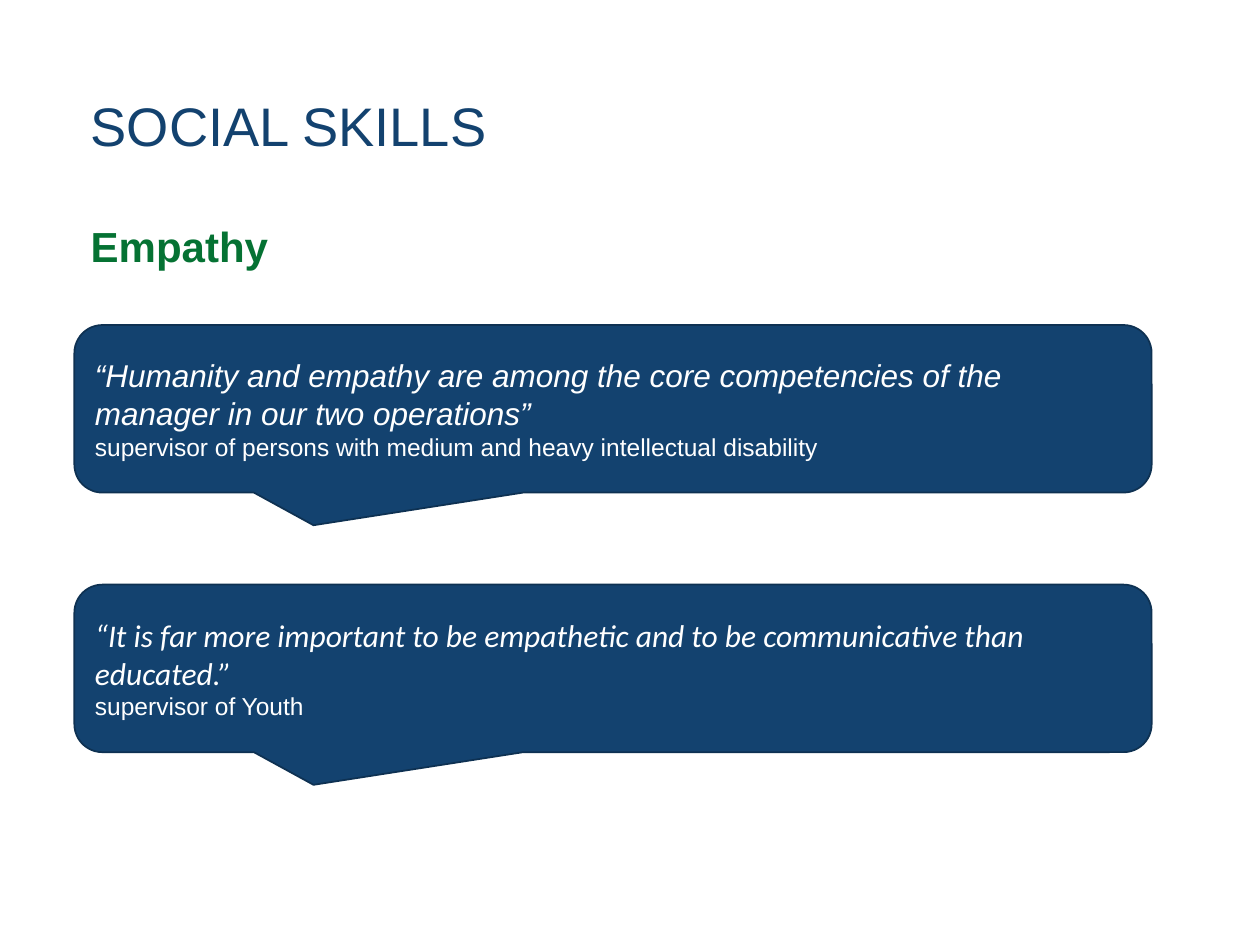
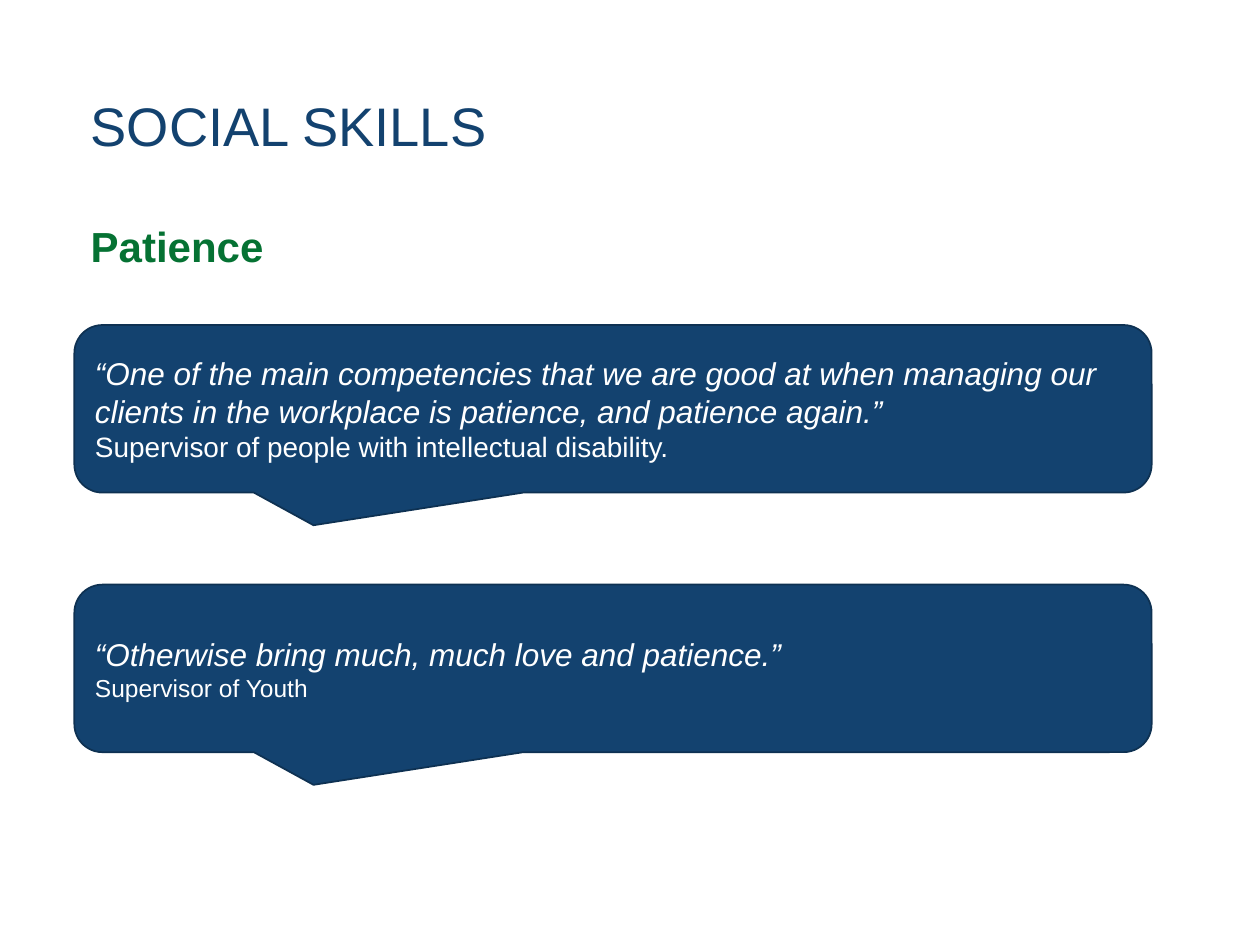
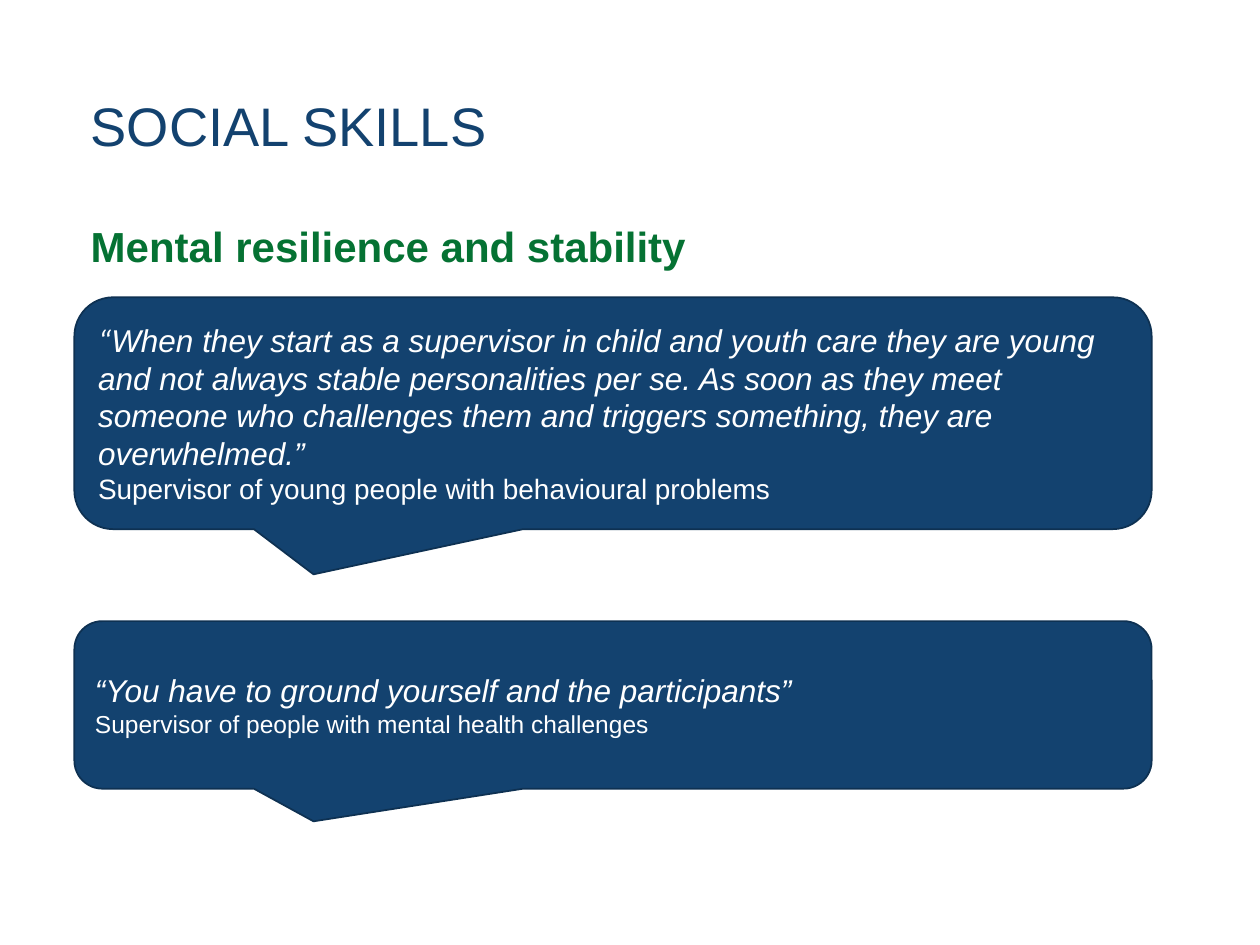
from pptx import Presentation
from pptx.dml.color import RGBColor
from pptx.enum.shapes import MSO_SHAPE as Shape
from pptx.enum.text import MSO_ANCHOR as Anchor, PP_ALIGN as Align
from pptx.util import Inches, Pt

BLUE, EDGE, GREEN, WHITE = "13426F", "0E3152", "057233", "FFFFFF"
SANS, ALT = "Arial", "Calibri"
TITLE = "SOCIAL SKILLS"
LEFT, WIDE = 0.72, 8.55
QUOTE_LEFT = 0.59
TAIL = (-0.278, 0.695, 0.167)

SLIDES = [
    ("Empathy", [
        (2.58, 1.33,
         [("“Humanity and empathy are among the core competencies of the manager in our two operations”", SANS)],
         "supervisor of persons with medium and heavy intellectual disability", 14),
        (4.64, 1.33,
         [("“It is far more important to be empathetic and to be communicative than educated.”", ALT)],
         "supervisor of Youth", 14),
    ]),
    ("Patience", [
        (2.58, 1.33,
         [("“One of the main competencies that we are good at when managing our clients in the workplace is patience, and patience again.”", SANS)],
         "Supervisor of people with intellectual disability.", 16),
        (4.64, 1.33,
         [("“Otherwise bring much, much love and patience.”", SANS)],
         "Supervisor of Youth", 14),
    ]),
    ("Mental resilience and stability", [
        (2.36, 1.84,
         [("“", ALT),
          ("When they start as a supervisor in child and youth care they are young and not always stable personalities per se. "
           "As soon as they meet someone who challenges them and triggers something, they are overwhelmed.”", SANS)],
         "Supervisor of young people with behavioural problems", 16),
        (4.93, 1.33,
         [("“You have to ground yourself and the participants”", SANS)],
         "Supervisor of people with mental health challenges", 14),
    ]),
]


def color(code):
    return RGBColor.from_string(code)


def add_run(para, text, size, code, face=SANS, bold=False, italic=False):
    run = para.add_run()
    run.text = text
    font = run.font
    font.name, font.size = face, Pt(size)
    font.bold, font.italic = bold, italic
    font.color.rgb = color(code)


def add_head(slide, top, high, text, size, code, space, after=0, bold=False):
    box = slide.shapes.add_textbox(Inches(LEFT), Inches(top), Inches(WIDE), Inches(high))
    frame = box.text_frame
    frame.word_wrap = True
    frame.margin_left = 0
    para = frame.paragraphs[0]
    para.line_spacing = space
    para.space_after = Pt(after)
    add_run(para, text, size, code, bold=bold)


def add_quote(slide, top, high, words, source, size):
    bubble = slide.shapes.add_shape(
        Shape.ROUNDED_RECTANGULAR_CALLOUT,
        Inches(QUOTE_LEFT), Inches(top), Inches(WIDE), Inches(high))
    for i, value in enumerate(TAIL):
        bubble.adjustments[i] = value
    bubble.shadow.inherit = False
    bubble.fill.solid()
    bubble.fill.fore_color.rgb = color(BLUE)
    bubble.line.color.rgb = color(EDGE)
    bubble.line.width = Pt(1)
    frame = bubble.text_frame
    frame.word_wrap = True
    frame.vertical_anchor = Anchor.MIDDLE
    quote, credit = frame.paragraphs[0], frame.add_paragraph()
    quote.alignment = credit.alignment = Align.LEFT
    for text, face in words:
        add_run(quote, text, 18, WHITE, face, italic=True)
    add_run(credit, source, size, WHITE)


def main():
    deck = Presentation()
    deck.slide_width, deck.slide_height = Inches(10), Inches(7.5)
    for skill, quotes in SLIDES:
        slide = deck.slides.add_slide(deck.slide_layouts[6])
        add_head(slide, 0.73, 1.12, TITLE, 31, BLUE, Pt(34))
        add_head(slide, 1.67, 2.24, skill, 24, GREEN, 1.07, after=8, bold=True)
        for quote in quotes:
            add_quote(slide, *quote)
    deck.save("out.pptx")


if __name__ == "__main__":
    main()
